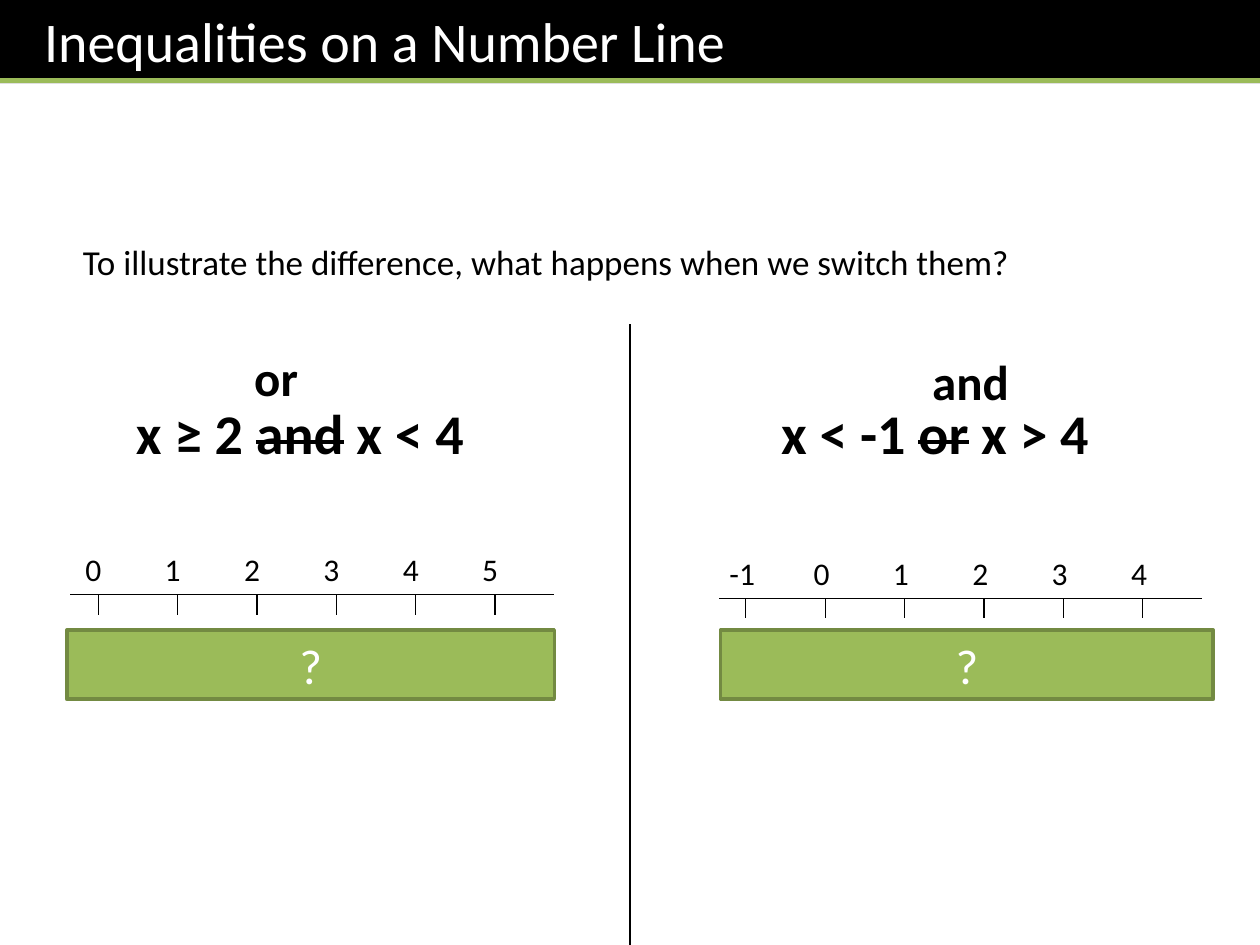
import pptx
import pptx.util
import pptx.dml.color
import pptx.enum.shapes
import pptx.enum.text
import pptx.oxml.ns
from lxml import etree

Pt = pptx.util.Pt
RGBColor = pptx.dml.color.RGBColor
ALIGN = pptx.enum.text.PP_ALIGN
ANCHOR = pptx.enum.text.MSO_ANCHOR
qn = pptx.oxml.ns.qn

BLACK = RGBColor(0x00, 0x00, 0x00)
WHITE = RGBColor(0xFF, 0xFF, 0xFF)
GREEN = RGBColor(0x9B, 0xBB, 0x59)
DARK_GREEN = RGBColor(0x73, 0x8A, 0x42)

TICK_GAP = 45.36
TICK_LENGTH = 11.4
LABEL_START = 13


def write_runs(tf, runs, align=ALIGN.LEFT, **font):
    p = tf.paragraphs[0]
    p.alignment = align
    for text, struck in runs:
        r = p.add_run()
        r.text = text
        color = font.get("color", BLACK)
        r.font.color.rgb = color
        values = {"name": "Calibri", "size": Pt(font["size"]), "bold": font.get("bold", False)}
        for name, value in values.items():
            setattr(r.font, name, value)
        if struck:
            r.font._element.set("strike", "sngStrike")
    return p


def add_text(s, box, runs, **font):
    tf = s.shapes.add_textbox(*map(Pt, box)).text_frame
    tf.word_wrap = True
    write_runs(tf, runs, **font)
    return tf


def add_line(s, x1, y1, x2, y2, color=BLACK, width=0.75):
    line = s.shapes.add_connector(
        pptx.enum.shapes.MSO_CONNECTOR.STRAIGHT, Pt(x1), Pt(y1), Pt(x2), Pt(y2))
    line.line.color.rgb = color
    line.line.width = Pt(width)
    etree.SubElement(line._element.spPr, qn("a:effectLst"))


def add_rect(s, box, fill, border=None):
    sp = s.shapes.add_shape(pptx.enum.shapes.MSO_SHAPE.RECTANGLE, *map(Pt, box))
    sp.shadow.inherit = False
    sp.fill.solid()
    sp.fill.fore_color.rgb = fill
    if border is None:
        sp.line.fill.background()
    else:
        sp.line.color.rgb = border
        sp.line.width = Pt(2)
    return sp


def add_header(s, left, top, width, height):
    tf = add_rect(s, (left, top, width, height), BLACK).text_frame
    tf.margin_left = Pt(25.2)
    tf.vertical_anchor = ANCHOR.TOP
    write_runs(tf, [("Inequalities on a Number Line", False)], size=32, color=WHITE)
    rule_y = top + height - 1.4
    add_line(s, left, rule_y, left + width, rule_y, GREEN, 3)


def add_number_line(s, left, top, width, first_tick, numbers):
    axis_y = top + 28.8
    add_line(s, left, axis_y, left + width, axis_y)
    for i in range(len(numbers)):
        x = left + first_tick + i * TICK_GAP
        add_line(s, x, axis_y, x, axis_y + TICK_LENGTH)
    labels = "".join(f"\t{n}" for n in numbers)
    tf = add_text(s, (left, top, 259.2, 28.8), [(labels, False)], size=18)
    tf.margin_left = 0
    tabs = etree.SubElement(tf.paragraphs[0]._p.get_or_add_pPr(), qn("a:tabLst"))
    for i in range(len(numbers)):
        position = Pt(LABEL_START + i * TICK_GAP)
        etree.SubElement(tabs, qn("a:tab"), pos=str(int(position)), algn="ctr")


def add_panel(s, left, top, content):
    x, y, width = content["swap_box"]
    add_text(s, (left + x, top + y, width, 41), [(content["swap"], False)], size=28, bold=True)
    add_text(s, (left + content["expression_x"], top + 39, 254.9, 46), content["expression"],
             align=ALIGN.CENTER, size=32, bold=True)
    x, y = content["axis_at"]
    add_number_line(s, left + x, top + y, 276, content["first_tick"], content["numbers"])
    x, width = content["cover"]
    sp = add_rect(s, (left + x, top + 175, width, 39.6), GREEN, DARK_GREEN)
    sp.text_frame.vertical_anchor = ANCHOR.MIDDLE
    write_runs(sp.text_frame, [("?", False)], align=ALIGN.CENTER, size=28, color=WHITE)


PANELS = [
    {
        "swap": "or", "swap_box": (138.2, 10.1, 41),
        "expression": [("x ≥ 2 ", False), ("and", True), (" x < 4", False)],
        "expression_x": 43.9, "axis_at": (40.3, 126), "first_tick": 15.8,
        "numbers": range(0, 6), "cover": (38.2, 278.6),
    },
    {
        "swap": "and", "swap_box": (165.6, 12.3, 73.4),
        "expression": [("x < -1 ", False), ("or", True), (" x > 4", False)],
        "expression_x": 46.8, "axis_at": (51.1, 128.2), "first_tick": 15.1,
        "numbers": range(-1, 5), "cover": (51.8, 281.5),
    },
]


def main():
    prs = pptx.Presentation()
    prs.slide_width, prs.slide_height = Pt(720), Pt(540)
    s = prs.slides.add_slide(prs.slide_layouts[6])
    add_line(s, 360, 540, 360, 185)
    for i, content in enumerate(PANELS):
        add_panel(s, i * 360, 185, content)
    question = "To illustrate the difference, what happens when we switch them?"
    add_text(s, (40.3, 133.9, 586, 31.7), [(question, False)], size=20)
    add_header(s, 0, 0, 720, 47.5)
    prs.save("out.pptx")


if __name__ == "__main__":
    main()
